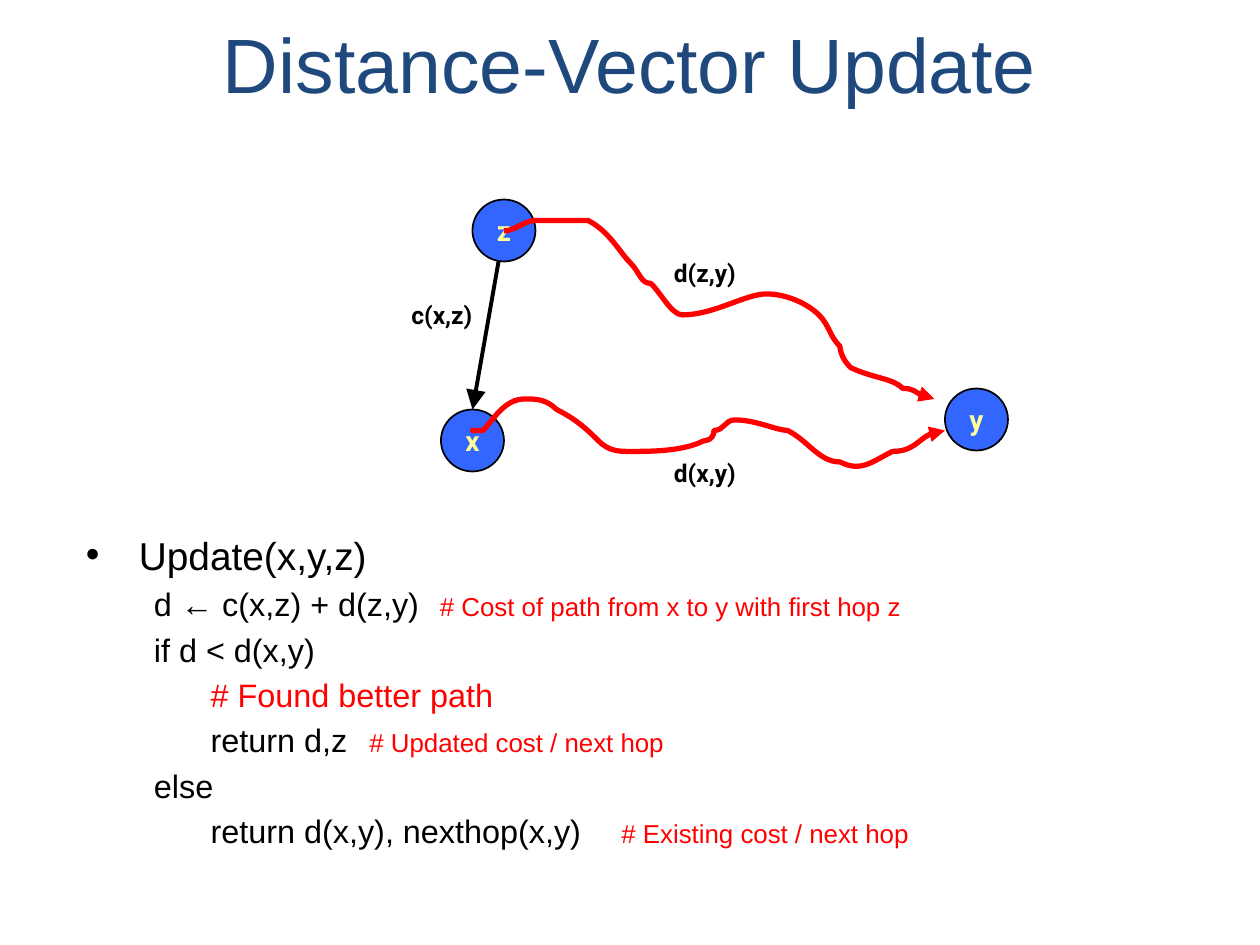
from math import hypot

from lxml import etree
from pptx import Presentation
from pptx.dml.color import RGBColor
from pptx.enum.shapes import MSO_CONNECTOR, MSO_SHAPE
from pptx.enum.text import MSO_ANCHOR, PP_ALIGN
from pptx.oxml.ns import qn
from pptx.util import Inches, Pt

OVAL, STRAIGHT = MSO_SHAPE.OVAL, MSO_CONNECTOR.STRAIGHT
MIDDLE, CENTER = MSO_ANCHOR.MIDDLE, PP_ALIGN.CENTER
UNIT = Inches(1) // 12          # the slide is a grid of 120 columns by 90 rows
BLACK, RED, BLUE = "000000", "FF0000", "3366FF"
NAVY, YELLOW = "1F497D", "FFFF99"

TITLE_FONT = {"name": "Arial", "size": Pt(44)}
NODE_FONT = {"name": "Roboto", "size": Pt(16), "bold": True}
COST_FONT = {"name": "Roboto", "size": Pt(14), "bold": True}

# Network: places in columns and rows from the corner of its box
NODE_SIZE = (6, 5.9)
COST_SIZE = (8.5, 4)
NODES = {"x": (4, 20), "z": (7, 0), "y": (52, 18)}
COSTS = {"c(x,z)": (0, 9), "d(z,y)": (25, 5), "d(x,y)": (25, 24)}
# Bends that each route to y passes through
ROUTES = {
    "z": [(10.4, 3), (12.9, 2.2), (17.7, 2.3), (22.2, 6.4), (23.9, 8.5), (27.4, 11.1),
          (35.4, 8.7), (40, 11.1), (42, 13.5), (43, 15.6), (48.3, 17.8), (51.2, 19)],
    "x": [(7.5, 22.5), (7.1, 21.9), (7.6, 21.6), (11.7, 19), (14.9, 19.6), (19.1, 23.4),
          (22.2, 24.4), (28.6, 23.4), (30, 22.5), (32.5, 20.6), (36.9, 22.3),
          (41.7, 25.4), (47.2, 24.4), (52, 21.5)],
}

# Pseudocode: level and text; a tab sets off a note, "#" starts a comment
HEADING_SIZE, CODE_SIZE, NOTE_SIZE = 22.2, 18.5, 14.8
INDENTS = [(0.42, -0.42), (0.81, -0.27), (1.25, -0.26)]     # margin, first line
PSEUDOCODE = [
    (0, "Update(x,y,z)"),
    (1, "d ← c(x,z) + d(z,y)\t# Cost of path from x to y with first hop z"),
    (1, "if d < d(x,y)"),
    (2, "# Found better path"),
    (2, "return d,z\t# Updated cost / next hop"),
    (1, "else"),
    (2, "return d(x,y), nexthop(x,y)\t# Existing cost / next hop"),
]


def color(code):
    return RGBColor.from_string(code)


def grid(*lengths):
    return [round(length * UNIT) for length in lengths]


def add_span(para, text, ink, formats):
    span = para.add_run()
    span.text = text
    span.font.color.rgb = color(ink)
    for name, value in formats.items():
        setattr(span.font, name, value)


def add_text_box(page, box, wrap=True):
    frame = page.shapes.add_textbox(*grid(*box)).text_frame
    frame.word_wrap = wrap
    return frame


def style_line(shape, ink, width, arrow_size=None):
    shape.line.color.rgb = color(ink)
    shape.line.width = Pt(width)
    if arrow_size:
        etree.SubElement(shape.line._get_or_add_ln(), qn("a:tailEnd"),
                         type="triangle", w=arrow_size, len=arrow_size)


def add_node(page, name, left, top):
    node = page.shapes.add_shape(OVAL, *grid(left, top, *NODE_SIZE))
    node.shadow.inherit = False
    node.fill.solid()
    node.fill.fore_color.rgb = color(BLUE)
    style_line(node, BLACK, 1)
    frame = node.text_frame
    frame.word_wrap = False
    frame.vertical_anchor = MIDDLE
    para = frame.paragraphs[0]
    para.alignment = CENTER
    add_span(para, name, YELLOW, NODE_FONT)
    return node


def smooth(bends):
    """Give the Bezier points of a smooth curve through the bends.

    At each bend the curve runs parallel to the line between its neighbours,
    and each handle is a third as long as its stretch of the route.
    """
    directions = []
    for before, after in zip(bends[:1] + bends[:-1], bends[1:] + bends[-1:]):
        dx, dy = after[0] - before[0], after[1] - before[1]
        directions.append((dx / hypot(dx, dy), dy / hypot(dx, dy)))
    points = []
    for index, (start, end) in enumerate(zip(bends, bends[1:])):
        reach = hypot(end[0] - start[0], end[1] - start[1]) / 3
        leaving, arriving = directions[index:index + 2]
        points += [(start[0] + reach * leaving[0], start[1] + reach * leaving[1]),
                   (end[0] - reach * arriving[0], end[1] - reach * arriving[1]),
                   end]
    return points


def add_route(page, left, top, bends):
    builder = page.shapes.build_freeform(*bends[0], scale=UNIT)
    builder.add_line_segments(smooth(bends), close=False)
    route = builder.convert_to_shape(*grid(left, top))
    route.shadow.inherit = False
    route.fill.background()
    style_line(route, RED, 3, "med")
    # Turn every three straight segments into one Bezier curve
    outline = next(route._element.iter(qn("a:path")))
    segments = outline.findall(qn("a:lnTo"))
    for first in range(0, len(segments), 3):
        curve = etree.SubElement(outline, qn("a:cubicBezTo"))
        for segment in segments[first:first + 3]:
            curve.append(segment[0])
            outline.remove(segment)


def add_link(page, start, node):
    link = page.shapes.add_connector(STRAIGHT, *grid(*start, *start))
    link.end_connect(node, 0)
    style_line(link, BLACK, 2.25, "lg")
    etree.SubElement(link._element.spPr, qn("a:effectLst"))


def add_title(page, box):
    frame = add_text_box(page, box)
    frame.vertical_anchor = MIDDLE
    para = frame.paragraphs[0]
    para.alignment = CENTER
    add_span(para, "Distance-Vector Update", NAVY, TITLE_FONT)


def add_network(page, box):
    left, top = box[:2]
    # Nodes, with the link from the centre of z slipped in behind z
    for name, (column, row) in NODES.items():
        node = add_node(page, name, left + column, top + row)
        if name == "x":
            z_column, z_row = NODES["z"]
            z_centre = (left + z_column + NODE_SIZE[0] / 2, top + z_row + NODE_SIZE[1] / 2)
            add_link(page, z_centre, node)
    # Routes to y
    for bends in ROUTES.values():
        add_route(page, left, top, bends)
    # Costs of the link and the routes
    for text, (column, row) in COSTS.items():
        frame = add_text_box(page, (left + column, top + row, *COST_SIZE), wrap=False)
        add_span(frame.paragraphs[0], text, BLACK, COST_FONT)


def add_pseudocode(page, box):
    frame = add_text_box(page, box)
    for index, (level, line) in enumerate(PSEUDOCODE):
        para = frame.add_paragraph() if index else frame.paragraphs[0]
        para.level = level
        size = CODE_SIZE if level else HEADING_SIZE
        para.space_before = Pt(size * 0.2)
        # Indents, and a bullet on the heading
        margin, indent = INDENTS[level]
        props = para._p.get_or_add_pPr()
        props.set("marL", str(Inches(margin)))
        props.set("indent", str(Inches(indent)))
        if level == 0:
            etree.SubElement(props, qn("a:buFont"), typeface="Arial")
            etree.SubElement(props, qn("a:buChar"), char="•")
        # Code, then the note after its tab
        code, tab, note = line.partition("\t")
        for text, points in [(code + tab, size), (note, NOTE_SIZE)]:
            if text:
                ink = RED if text.startswith("#") else BLACK
                add_span(para, text, ink, {"name": "Arial", "size": Pt(points)})


def main():
    deck = Presentation()
    deck.slide_width, deck.slide_height = grid(120, 90)
    page = deck.slides.add_slide(deck.slide_layouts[6])
    add_title(page, (6, 0, 108, 12))
    add_pseudocode(page, (7, 50, 111, 29.4))
    add_network(page, (38, 19, 58, 28))
    deck.save("out.pptx")


if __name__ == "__main__":
    main()
